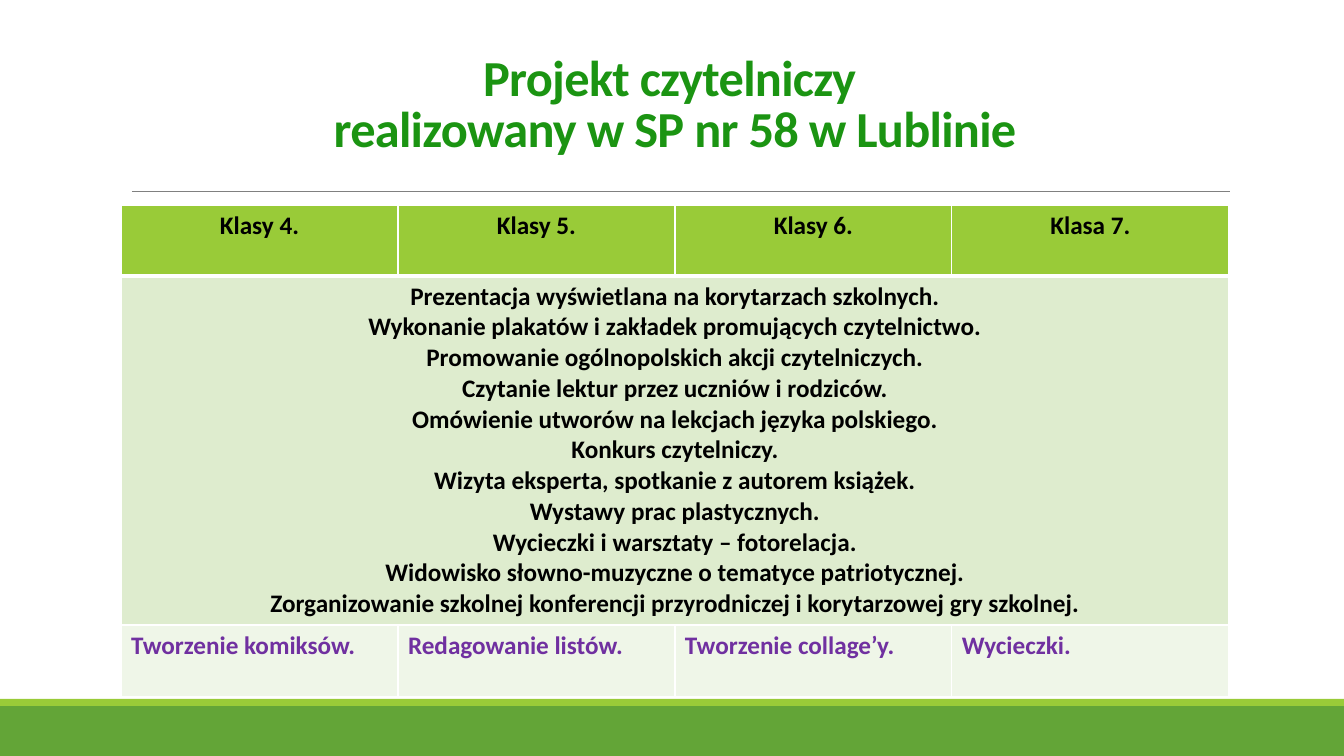
from copy import deepcopy

from pptx import Presentation
from pptx import util as u
from pptx.dml.color import RGBColor
from pptx.enum import shapes, text
from pptx.oxml import parse_xml
from pptx.oxml.ns import nsdecls, qn

PX = 914400 / 100.8
WIDTH, HEIGHT = 1344, 756
COLORS = {
    "title": "1B9412", "rule": "808080", "band": "63A537", "stripe": "99CB38",
    "header": "99CB38", "shared": "DEECCE", "class": "EFF6E8",
    "text": "000000", "accent": "7030A0", "border": "FFFFFF",
}
CLASSES = ["Klasy 4.", "Klasy 5.", "Klasy 6.", "Klasa 7."]
SHARED_ACTIVITIES = [
    "Prezentacja wyświetlana na korytarzach szkolnych.",
    "Wykonanie plakatów i zakładek promujących czytelnictwo.",
    "Promowanie ogólnopolskich akcji czytelniczych.",
    "Czytanie lektur przez uczniów i rodziców.\v"
    "Omówienie utworów na lekcjach języka polskiego.\v"
    "Konkurs czytelniczy.",
    "Wizyta eksperta, spotkanie z autorem książek.\v"
    "Wystawy prac plastycznych.\v"
    "Wycieczki i warsztaty – fotorelacja.\v"
    "Widowisko słowno-muzyczne o tematyce patriotycznej.",
    "Zorganizowanie szkolnej konferencji przyrodniczej i korytarzowej gry szkolnej.",
]
CLASS_ACTIVITIES = ["Tworzenie komiksów.", "Redagowanie listów.", "Tworzenie collage’y.", "Wycieczki."]


def px(length):
    return u.Emu(round(length * PX))


def color(name):
    return RGBColor.from_string(COLORS[name])


def set_values(target, values):
    for name, value in values.items():
        setattr(target, name, value)


def write(frame, paragraphs, size, color_name, align, spacing=None, tracking=None):
    """Fill a text frame; line breaks take the format of the text."""
    frame.text = "\n".join(paragraphs)
    for paragraph in frame.paragraphs:
        set_values(paragraph, {"alignment": align, "line_spacing": spacing})
        for run in paragraph.runs:
            set_values(run.font, {"name": "Calibri", "size": u.Pt(size), "bold": True})
            run.font.color.rgb = color(color_name)
            if tracking is not None:
                run.font._element.set("spc", str(tracking))
        for line_break in paragraph._p.findall(qn("a:br")):
            line_break.append(deepcopy(paragraph.runs[0].font._element))


def add_bar(slide, left, top, width, height, color_name):
    bar = slide.shapes.add_shape(shapes.MSO_SHAPE.RECTANGLE, *map(px, (left, top, width, height)))
    bar.shadow.inherit = False
    bar.fill.solid()
    bar.fill.fore_color.rgb = color(color_name)
    bar.line.fill.background()


def add_footer(slide, left, top, width, height):
    stripe = 7
    add_bar(slide, left, top + stripe, width, height - stripe, "band")
    add_bar(slide, left, top, width, stripe, "stripe")


def add_rule(slide, left, top, width):
    rule = slide.shapes.add_connector(
        shapes.MSO_CONNECTOR.STRAIGHT, px(left), px(top), px(left + width), px(top))
    rule.line.width = u.Pt(0.5)
    rule.line.color.rgb = color("rule")
    rule._element.spPr.append(parse_xml(f"<a:effectLst {nsdecls('a')}/>"))


def add_title(slide, left, top, width, height):
    title = slide.shapes.title
    set_values(title, {"left": px(left), "top": px(top), "width": px(width), "height": px(height)})
    set_values(title.text_frame, {
        "word_wrap": True,
        "auto_size": text.MSO_AUTO_SIZE.NONE,
        "vertical_anchor": text.MSO_ANCHOR.BOTTOM,
    })
    write(title.text_frame, ["Projekt czytelniczy \vrealizowany w SP nr 58 w Lublinie"],
          36, "title", text.PP_ALIGN.CENTER, spacing=0.85, tracking=-50)


def style_cell(cell, fill_name, top_width, bottom_width):
    cell.fill.solid()
    cell.fill.fore_color.rgb = color(fill_name)
    borders = {"lnL": 1, "lnR": 1, "lnT": top_width, "lnB": bottom_width}
    for position, (tag, width) in enumerate(borders.items()):
        cell._tc.get_or_add_tcPr().insert(position, parse_xml(
            f'<a:{tag} {nsdecls("a")} w="{u.Pt(width)}"><a:solidFill>'
            f'<a:srgbClr val="{COLORS["border"]}"/></a:solidFill></a:{tag}>'))


def add_activity_table(slide, left, top, width, row_heights):
    frame = slide.shapes.add_table(
        len(row_heights), len(CLASSES), px(left), px(top), px(width), px(sum(row_heights)))
    table = frame.table
    for column in table.columns:
        column.width = px(width / len(CLASSES))
    for row, height in zip(table.rows, row_heights):
        row.height = px(height)

    # Fills and borders: a thick line under the header
    row_styles = [("header", 1, 3), ("shared", 3, 1), ("class", 1, 1)]
    for row, row_style in zip(table.rows, row_styles):
        for cell in row.cells:
            style_cell(cell, *row_style)

    # Text: one column per class, shared activities across all
    table.cell(1, 0).merge(table.cell(1, len(CLASSES) - 1))
    write(table.cell(1, 0).text_frame, SHARED_ACTIVITIES, 18, "text", text.PP_ALIGN.CENTER)
    for index, (name, activity) in enumerate(zip(CLASSES, CLASS_ACTIVITIES)):
        write(table.cell(0, index).text_frame, [name], 18, "text", text.PP_ALIGN.CENTER)
        write(table.cell(2, index).text_frame, [activity], 18, "accent", text.PP_ALIGN.LEFT)


def main():
    presentation = Presentation()
    set_values(presentation, {"slide_width": px(WIDTH), "slide_height": px(HEIGHT)})
    slide = presentation.slides.add_slide(presentation.slide_layouts.get_by_name("Title Only"))
    add_footer(slide, 0, 699, WIDTH, HEIGHT - 699)
    add_rule(slide, 132, 191, 1098)
    add_title(slide, 121, 31, 1108, 132)
    add_activity_table(slide, 121, 205, 1108, [71, 349, 72])
    presentation.save("out.pptx")


if __name__ == "__main__":
    main()
